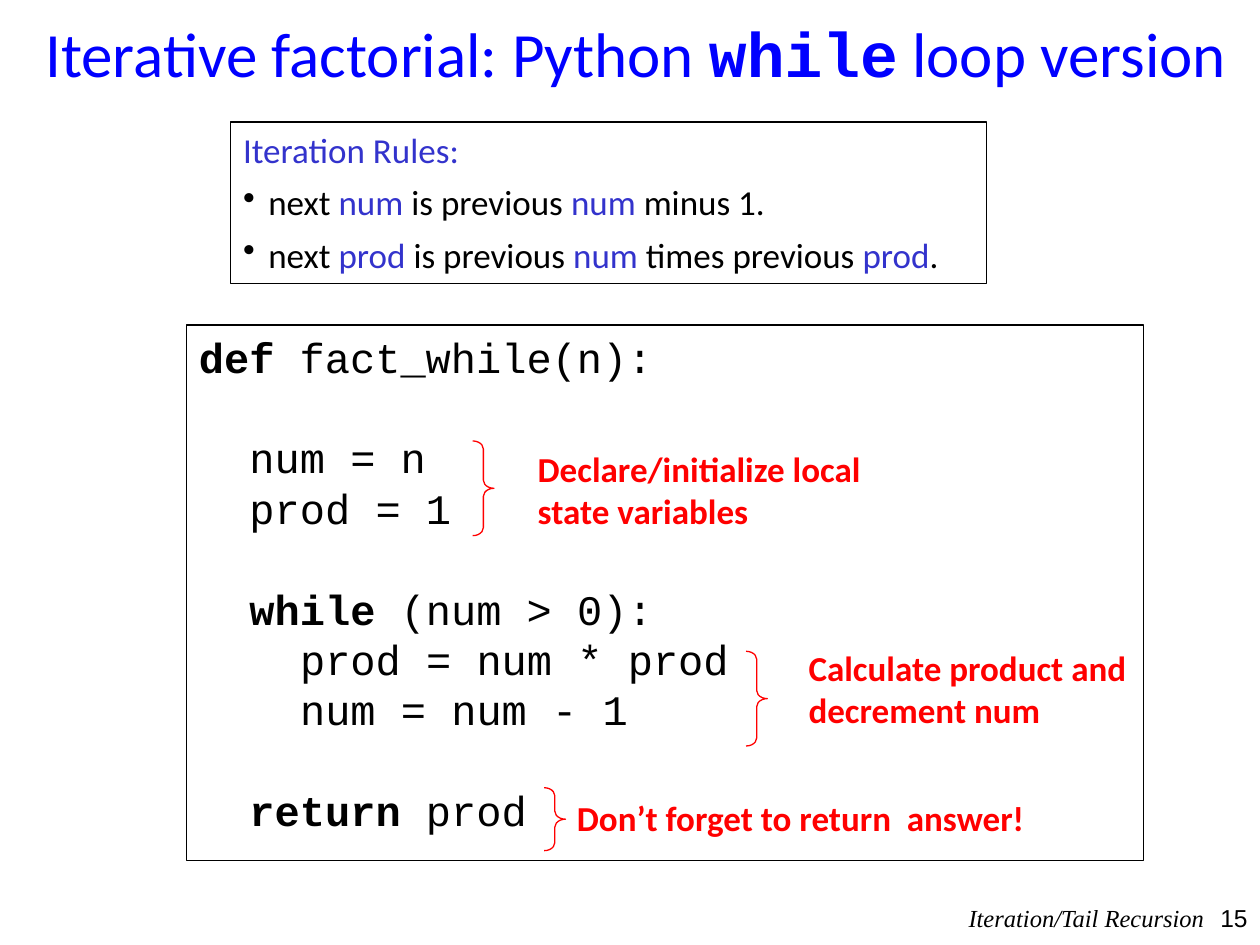
from lxml import etree
from pptx import Presentation
from pptx import util as u
from pptx.dml.color import RGBColor
from pptx.enum import shapes, text
from pptx.oxml.ns import qn

BLACK, RED, INDIGO = "000000", "FF0000", "3333CC"
CODE_LINE = 28.8


def color(value):
    return RGBColor.from_string(value)


def write(paragraph, marked, size, font, fill, accent=None, **accent_font):
    for index, part in enumerate(marked.split("|")):
        if not part:
            continue
        run = paragraph.add_run()
        run.text = part
        emphasised = index % 2 == 1
        run.font.size = u.Pt(size)
        run.font.name = accent_font.get("name", font) if emphasised else font
        run.font.bold = emphasised and accent_font.get("bold", False)
        run.font.color.rgb = color(accent if emphasised and accent else fill)


def indent(paragraph, left, first=0):
    properties = paragraph._p.get_or_add_pPr()
    properties.set("marL", str(u.Cm(left)))
    properties.set("indent", str(u.Cm(first)))
    return properties


def add_outline(slide, kind, box, line):
    outline = slide.shapes.add_shape(kind, *map(u.Cm, box))
    outline.shadow.inherit = False
    outline.fill.background()
    outline.line.color.rgb = color(line)
    outline.line.width = u.Pt(0.75)
    return outline


def add_frame(slide, box):
    frame = add_outline(slide, shapes.MSO_SHAPE.RECTANGLE, box, BLACK).text_frame
    frame.word_wrap = True
    frame.vertical_anchor = text.MSO_ANCHOR.TOP
    return frame


def add_lines(frame, count):
    lines = [frame.paragraphs[0]] + [frame.add_paragraph() for _ in range(count - 1)]
    for line in lines:
        line.alignment = text.PP_ALIGN.LEFT
    return lines


def add_title(slide, marked):
    title = slide.shapes.title
    title.left, title.top, title.width, title.height = map(u.Cm, (0.43, 0, 24.77, 2.11))
    frame = title.text_frame
    frame.auto_size = text.MSO_AUTO_SIZE.NONE
    frame.vertical_anchor = text.MSO_ANCHOR.MIDDLE
    frame.paragraphs[0].alignment = text.PP_ALIGN.CENTER
    write(frame.paragraphs[0], marked, 36, "Calibri", "0000FF", name="Courier New", bold=True)


def add_code(slide, box, code):
    frame = add_frame(slide, box)
    for line, (level, gap, marked) in zip(add_lines(frame, len(code)), code):
        indent(line, level * 1.02)
        line.line_spacing = u.Pt(CODE_LINE)
        line.space_before = u.Pt(gap * CODE_LINE)
        write(line, marked, 24, "Courier New", BLACK, bold=True)


def add_rules(slide, box, heading, rules):
    lines = add_lines(add_frame(slide, box), len(rules) + 1)
    for line in lines:
        line.space_before = u.Pt(6)
    write(lines[0], heading, 20, "Calibri", INDIGO)
    for line, rule in zip(lines[1:], rules):
        bullet = etree.SubElement(indent(line, 0.51, -0.51), qn("a:buChar"))
        bullet.set("char", "•")
        write(line, rule, 20, "Calibri", BLACK, INDIGO)


def add_label(slide, box, words, size, font, fill, align=text.PP_ALIGN.LEFT):
    frame = slide.shapes.add_textbox(*map(u.Cm, box)).text_frame
    frame.word_wrap = True
    frame.text = words
    label = frame.paragraphs[0]
    label.alignment = align
    style = label.runs[0].font
    style.size, style.name, style.color.rgb = u.Pt(size), font, color(fill)
    return style


def add_remark(slide, brace_box, label_box, words):
    brace = add_outline(slide, shapes.MSO_SHAPE.RIGHT_BRACE, brace_box, RED)
    brace.adjustments[0] = 0.375
    add_label(slide, label_box, words, 20, "Calibri", RED).bold = True


def main():
    deck = Presentation()
    deck.slide_width, deck.slide_height = u.Cm(25.4), u.Cm(19.05)
    slide = deck.slides.add_slide(deck.slide_layouts[5])

    add_title(slide, "Iterative factorial: Python |while| loop version")
    add_rules(slide, (4.65, 2.46, 15.24, 3.25), "Iteration Rules:", [
        "next |num |is previous |num |minus 1.",
        "next |prod |is previous |num |times previous |prod|.",
    ])
    add_code(slide, (3.76, 6.55, 19.3, 10.8), [
        (0, 0, "|def |fact_while(n):"),
        (1, 1, "num = n"),
        (1, 0, "prod = 1"),
        (1, 1, "|while |(num > 0):"),
        (2, 0, "prod = num * prod"),
        (2, 0, "num = num - 1"),
        (1, 1, "|return| prod"),
    ])

    remarks = [
        ((9.53, 8.89, 0.43, 1.91), (10.59, 8.89, 7.42, 1.96),
         "Declare/initialize local state variables"),
        ((15.04, 13.13, 0.43, 1.91), (16.05, 12.9, 7.24, 1.96),
         "Calculate product and decrement num"),
        ((10.97, 15.88, 0.43, 1.27), (11.38, 15.93, 10.62, 1.12),
         "Don’t forget to return  answer!"),
    ]
    for brace_box, label_box, words in remarks:
        add_remark(slide, brace_box, label_box, words)

    right = text.PP_ALIGN.RIGHT
    add_label(slide, (24.13, 18.08, 1.27, 0.97), "15", 14, "Arial", BLACK, right)
    add_label(slide, (19.25, 18.08, 5.28, 0.97), "Iteration/Tail Recursion",
              14, "Times New Roman", BLACK, right).italic = True
    deck.save("out.pptx")


if __name__ == "__main__":
    main()
